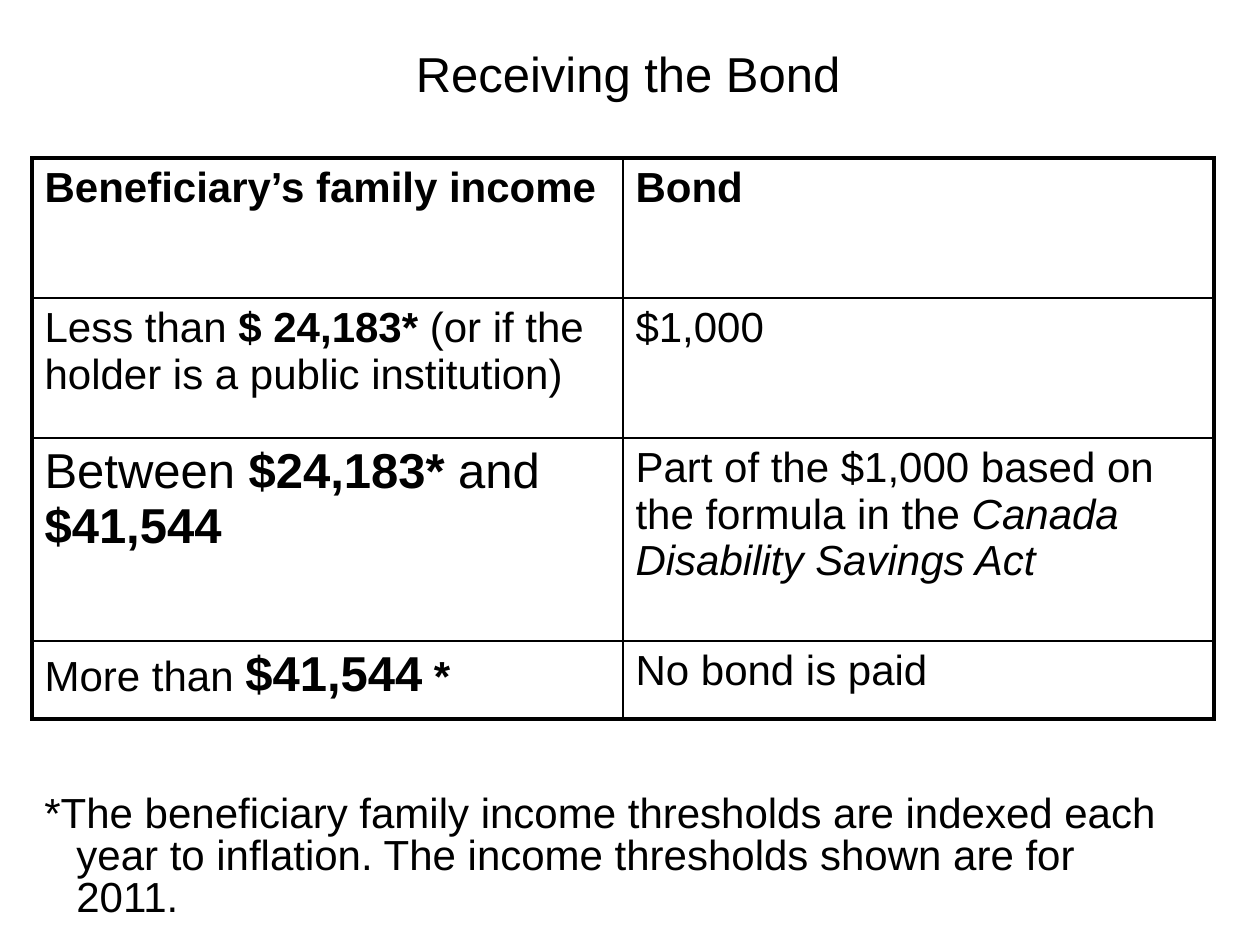
"""Builds the slide on receiving the bond by family income."""
from lxml import etree
from pptx import Presentation
from pptx import util as u
from pptx.dml.color import RGBColor
from pptx.enum import text
from pptx.oxml.ns import qn

COLORS = {"ink": "000000"}
FONT = "Arial"
PX = 914400 / 126

TITLE = "Receiving the Bond"
NOTE = ("*The beneficiary family income thresholds are indexed each year to inflation. "
        "The income thresholds shown are for 2011.")
ROWS = [
    ([("Beneficiary’s family income", 24, "b")], [("Bond", 24, "b")]),
    ([("Less than ", 24, ""), ("$ 24,183*", 24, "b"),
      (" (or if the holder is a public institution)", 24, "")],
     [("$1,000", 24, "")]),
    ([("Between ", 28, ""), ("$24,183*", 28, "b"), (" and ", 28, ""), ("$41,544", 28, "b")],
     [("Part of the $1,000 based on the formula in the ", 24, ""),
      ("Canada Disability Savings Act", 24, "i")]),
    ([("More than ", 24, ""), ("$41,544", 28, "b"), (" *", 24, "b")],
     [("No bond is paid", 24, "")]),
]
ROW_HEIGHTS = [140, 140, 203, 78]
COLUMN_WIDTH = 591
TABLE_LEFT, TABLE_TOP = 32, 158
OUTER, INNER = 2.25, 1


def px(length):
    return u.Emu(round(length * PX))


def style(font, size, marks=""):
    font.name = FONT
    font.size = u.Pt(size)
    font.bold = "b" in marks
    font.italic = "i" in marks
    font.color.rgb = RGBColor.from_string(COLORS["ink"])


def add_text(page, left, top, width, height, words, size):
    box = page.shapes.add_textbox(*map(px, (left, top, width, height)))
    box.text_frame.word_wrap = True
    para = box.text_frame.paragraphs[0]
    para.text = words
    style(para.font, size)
    return box, para


def set_borders(cell, widths):
    properties = cell._tc.get_or_add_tcPr()
    for index, (side, width) in enumerate(widths.items()):
        line = etree.Element(qn(f"a:ln{side}"), w=str(u.Pt(width)))
        fill = etree.SubElement(line, qn("a:solidFill"))
        etree.SubElement(fill, qn("a:srgbClr"), val=COLORS["ink"])
        properties.insert(index, line)


def add_income_table(page):
    size = (TABLE_LEFT, TABLE_TOP, 2 * COLUMN_WIDTH, sum(ROW_HEIGHTS))
    table = page.shapes.add_table(len(ROWS), 2, *map(px, size)).table
    table.first_row = table.horz_banding = False
    for column in table.columns:
        column.width = px(COLUMN_WIDTH)
    for r, (height, row) in enumerate(zip(ROW_HEIGHTS, ROWS)):
        table.rows[r].height = px(height)
        for c, spans in enumerate(row):
            cell = table.cell(r, c)
            cell.fill.background()
            set_borders(cell, {
                "L": OUTER if c == 0 else INNER,
                "R": OUTER if c == 1 else INNER,
                "T": OUTER if r == 0 else INNER,
                "B": OUTER if r == len(ROWS) - 1 else INNER,
            })
            para = cell.text_frame.paragraphs[0]
            for words, points, marks in spans:
                span = para.add_run()
                span.text = words
                style(span.font, points, marks)


def main():
    deck = Presentation()
    deck.slide_width, deck.slide_height = px(1260), px(945)
    page = deck.slides.add_slide(deck.slide_layouts[6])

    box, para = add_text(page, 53, 32, 1150, 123, TITLE, 28)
    box.text_frame.margin_top = px(12)
    para.alignment = text.PP_ALIGN.CENTER

    add_income_table(page)

    box, para = add_text(page, 32, 788, 1150, 52, NOTE, 24)
    para.line_spacing = 0.84
    indent = px(32)
    properties = para._p.get_or_add_pPr()
    properties.set("marL", str(indent))
    properties.set("indent", str(-indent))

    deck.save("out.pptx")


if __name__ == "__main__":
    main()
